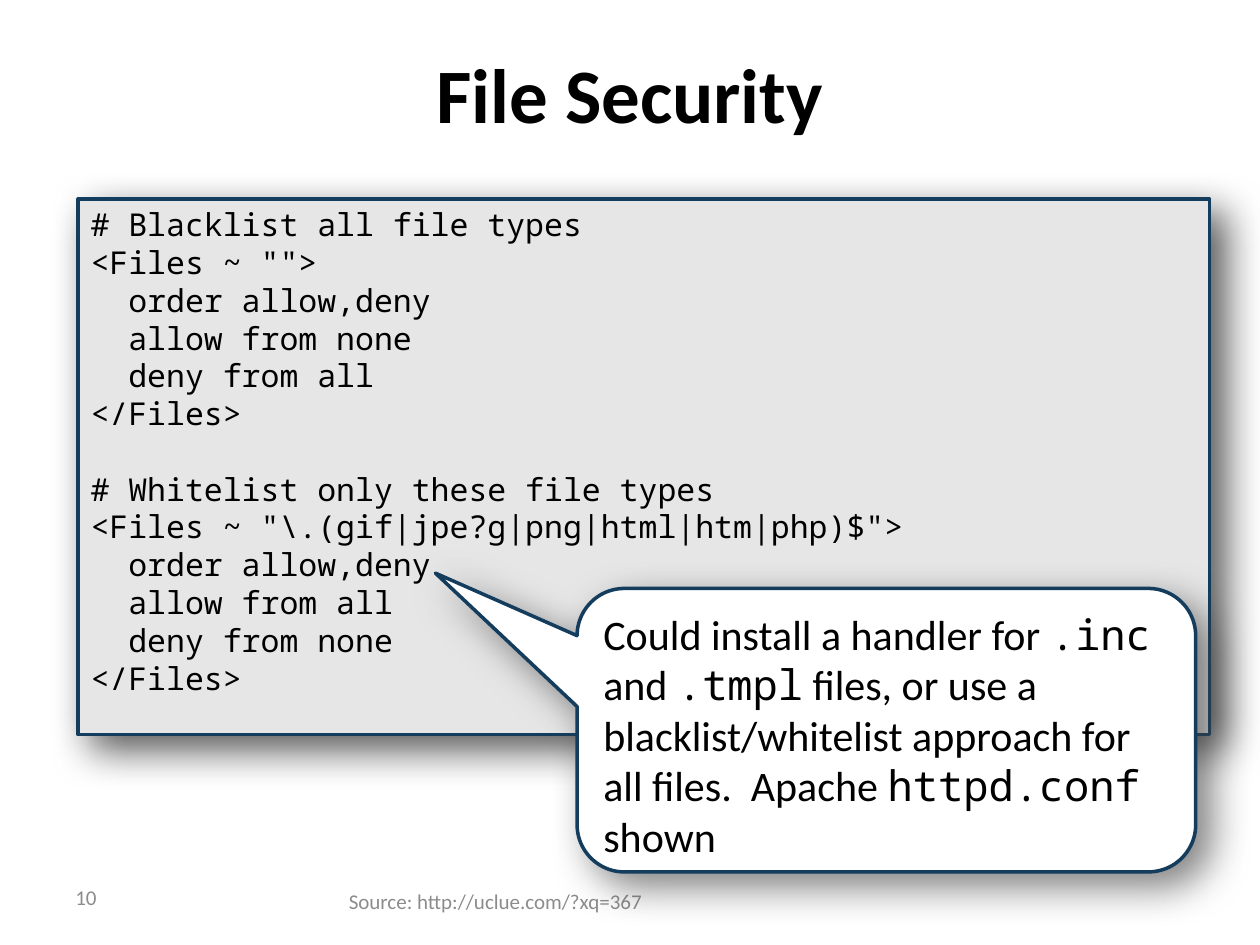
from dataclasses import dataclass

from lxml import etree
from pptx import Presentation
from pptx.dml.color import RGBColor
from pptx.enum.shapes import MSO_SHAPE
from pptx.enum.text import MSO_ANCHOR, PP_ALIGN
from pptx.oxml.ns import qn
from pptx.util import Inches, Pt

RECT = MSO_SHAPE.RECTANGLE
CALLOUT = MSO_SHAPE.ROUNDED_RECTANGULAR_CALLOUT
TOP, MIDDLE = MSO_ANCHOR.TOP, MSO_ANCHOR.MIDDLE
LEFT, CENTER = PP_ALIGN.LEFT, PP_ALIGN.CENTER

BLACK = RGBColor(0x00, 0x00, 0x00)
WHITE = RGBColor(0xFF, 0xFF, 0xFF)
GRAY = RGBColor(0x8C, 0x8C, 0x8C)
PANEL = RGBColor(0xE6, 0xE6, 0xE6)
NAVY = RGBColor(0x13, 0x3C, 0x5D)
SOFT_BLACK = RGBColor(0x40, 0x40, 0x40)

SANS, MONO = "Calibri", "Noto Sans Mono"
WIDTH, HEIGHT = Inches(10), Inches(7.5)
CODE_LINE = Pt(21.5)

TITLE_FONT = {"name": SANS, "size": Pt(44), "bold": True}
FOOTER_FONT = {"name": SANS, "size": Pt(12)}
CODE_FONT = {"name": MONO, "size": Pt(18)}
NOTE_FONTS = (
    {"name": SANS, "size": Pt(24)},
    {"name": MONO, "size": Pt(24)},
)


@dataclass(frozen=True)
class Area:
    """Left, top, width and height in percent of the slide's size."""

    left: float
    top: float
    width: float
    height: float

    def emu(self) -> tuple[int, int, int, int]:
        return (
            round(WIDTH * self.left / 100),
            round(HEIGHT * self.top / 100),
            round(WIDTH * self.width / 100),
            round(HEIGHT * self.height / 100),
        )


@dataclass(frozen=True)
class Label:
    text: str
    area: Area
    font: dict
    color: RGBColor
    align: PP_ALIGN = LEFT


@dataclass(frozen=True)
class Panel:
    kind: MSO_SHAPE
    area: Area
    fill: RGBColor
    shadow: RGBColor
    wrap: bool
    adjustments: tuple[float, ...] = ()


LABELS = (
    Label("File Security", Area(5, 4, 90, 11.6), TITLE_FONT, BLACK, CENTER),
    Label("10", Area(5, 92.27, 23.3, 5.33), FOOTER_FONT, GRAY),
    Label("Source: http://uclue.com/?xq=367", Area(26.7, 93.33, 25.6, 4),
          FOOTER_FONT, GRAY),
)

CODE_PANEL = Panel(RECT, Area(6.2, 21.07, 89.8, 56.67), PANEL, BLACK, False)
NOTE_PANEL = Panel(CALLOUT, Area(45.8, 62.27, 49.1, 30), WHITE, SOFT_BLACK,
                   True, (-0.729, -0.554, 0.167))

CODE_BLOCKS = (
    r'''# Blacklist all file types
<Files ~ "">
  order allow,deny
  allow from none
  deny from all
</Files>''',
    r'''# Whitelist only these file types
<Files ~ "\.(gif|jpe?g|png|html|htm|php)$">
  order allow,deny
  allow from all
  deny from none
</Files>''',
)

NOTE_RUNS = (
    "Could install a handler for ", ".inc", " and ", ".tmpl",
    " files, or use a blacklist/whitelist approach for all files.  Apache ",
    "httpd.conf", " shown",
)


def add_run(p, text: str, font: dict, color: RGBColor) -> None:
    r = p.add_run()
    r.text = text
    for name, value in font.items():
        setattr(r.font, name, value)
    r.font.color.rgb = color


def add_label(s, label: Label) -> None:
    tf = s.shapes.add_textbox(*label.area.emu()).text_frame
    tf.word_wrap = True
    tf.vertical_anchor = MIDDLE
    p = tf.paragraphs[0]
    p.alignment = label.align
    add_run(p, label.text, label.font, label.color)


def add_shadow(sp, color: RGBColor) -> None:
    sp.shadow.inherit = False
    effects = sp.element.spPr.find(qn("a:effectLst"))
    shadow = etree.SubElement(
        effects, qn("a:outerShdw"), blurRad=str(Pt(23)), dist=str(Pt(11)),
        dir=str(45 * 60000), algn="tl", rotWithShape="0")
    clr = etree.SubElement(shadow, qn("a:srgbClr"), val=str(color))
    etree.SubElement(clr, qn("a:alpha"), val="65000")


def add_panel(s, panel: Panel):
    sp = s.shapes.add_shape(panel.kind, *panel.area.emu())
    for i, value in enumerate(panel.adjustments):
        sp.adjustments[i] = value
    sp.fill.solid()
    sp.fill.fore_color.rgb = panel.fill
    sp.line.color.rgb = NAVY
    sp.line.width = Pt(2)
    add_shadow(sp, panel.shadow)
    tf = sp.text_frame
    tf.word_wrap = panel.wrap
    tf.vertical_anchor = TOP
    tf.paragraphs[0].alignment = LEFT
    return tf


def add_code(tf, blocks: tuple[str, ...]) -> None:
    p = tf.paragraphs[0]
    for b, block in enumerate(blocks):
        for i, line in enumerate(block.splitlines()):
            if b or i:
                p = tf.add_paragraph()
                p.alignment = LEFT
            if b and not i:
                p.space_before = CODE_LINE
            add_run(p, line, CODE_FONT, BLACK)


def main() -> None:
    prs = Presentation()
    prs.slide_width, prs.slide_height = WIDTH, HEIGHT
    s = prs.slides.add_slide(prs.slide_layouts[6])
    for label in LABELS:
        add_label(s, label)
    add_code(add_panel(s, CODE_PANEL), CODE_BLOCKS)
    p = add_panel(s, NOTE_PANEL).paragraphs[0]
    for i, text in enumerate(NOTE_RUNS):
        add_run(p, text, NOTE_FONTS[i % 2], BLACK)
    prs.save("out.pptx")


if __name__ == "__main__":
    main()
